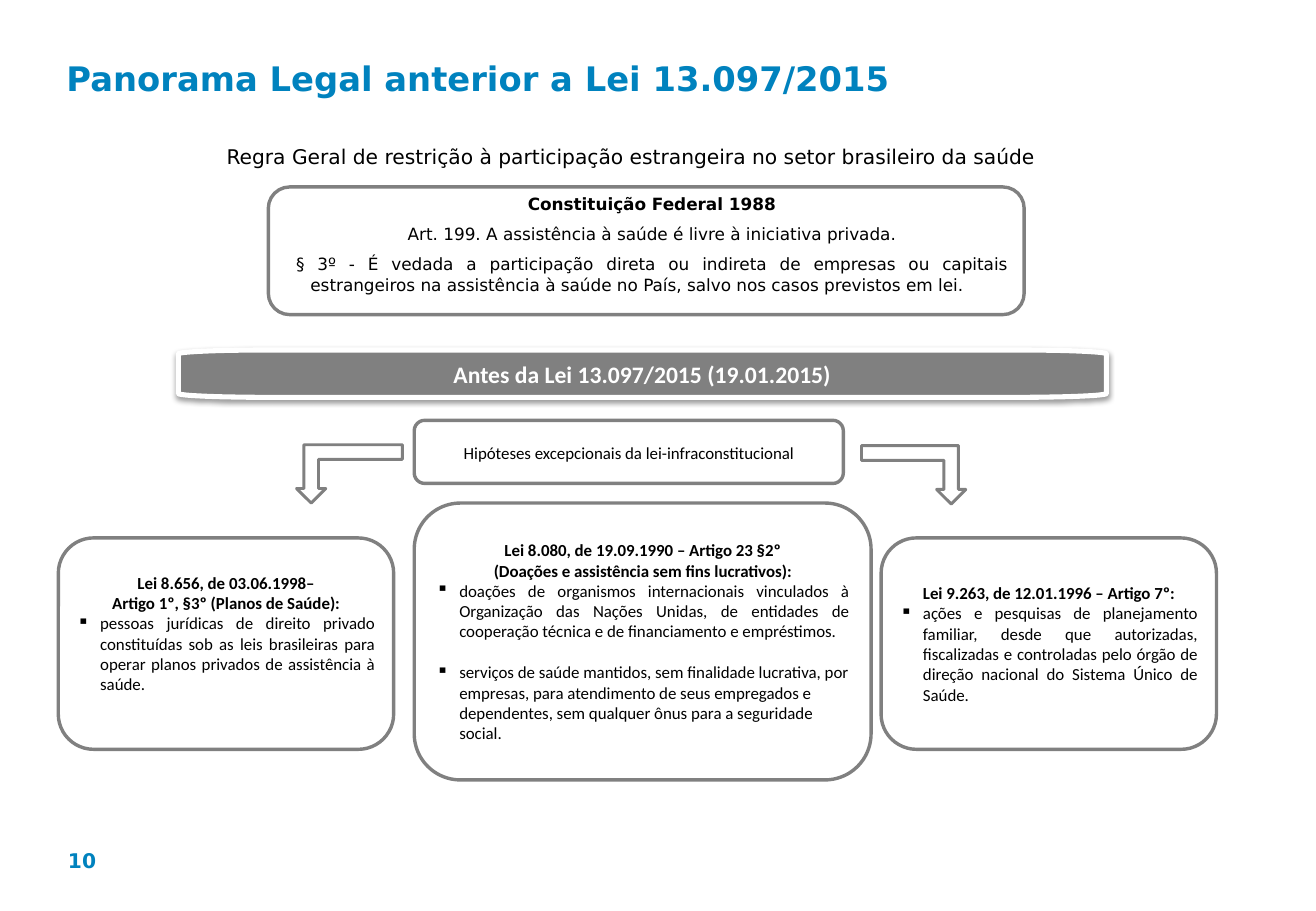
"""Build a slide on the legal framework in force before Lei 13.097/2015."""
import math

import pptx
import pptx.dml.color
import pptx.enum.shapes
import pptx.enum.text
import pptx.oxml
import pptx.oxml.ns
import pptx.util

Cm, Pt = pptx.util.Cm, pptx.util.Pt
Align = pptx.enum.text.PP_ALIGN
Anchor = pptx.enum.text.MSO_ANCHOR
Preset = pptx.enum.shapes.MSO_SHAPE

THEME = {
    "colors": {"accent": "0082BE", "text": "000000", "gray": "808080", "white": "FFFFFF"},
    "title": {"size": 20, "name": "DejaVu Sans", "bold": True, "color": "accent"},
    "number": {"size": 12, "name": "DejaVu Sans", "bold": True, "color": "accent"},
    "subtitle": {"size": 12, "name": "DejaVu Sans", "bold": False, "color": "text"},
    "law_head": {"size": 10, "name": "DejaVu Sans", "bold": True, "color": "text"},
    "law": {"size": 10, "name": "DejaVu Sans", "bold": False, "color": "text"},
    "banner": {"size": 14, "name": "Calibri", "bold": True, "color": "white"},
    "card_head": {"size": 10, "name": "Calibri", "bold": True, "color": "text"},
    "card": {"size": 10, "name": "Calibri", "bold": False, "color": "text"},
}

LOOSE = {"alignment": Align.CENTER, "line_spacing": 1.05}
CENTER = {"alignment": Align.CENTER}
JUSTIFY = {"alignment": Align.JUSTIFY}
LAW = {"line_spacing": 1.05, "space_before": Pt(5)}
LAW_INDENT, BULLET_INDENT = 0.3, 0.48

TEXT_BOXES = [
    ((0.41, 17.48, 1.85, 1.02), Anchor.MIDDLE, [("10", "number", {"alignment": Align.RIGHT}, 0, "")]),
    ((1.14, 1.09, 25.15, 1.45), Anchor.TOP,
     [("Panorama Legal anterior a Lei 13.097/2015", "title", {}, 0, "")]),
    ((1.6, 2.87, 23.19, 0.74), Anchor.TOP,
     [("Regra Geral de restrição à participação estrangeira no setor brasileiro da saúde",
       "subtitle", LOOSE, 0, "")]),
    ((5.94, 3.91, 15.37, 2.44), Anchor.TOP, [
        ("Constituição Federal 1988", "law_head", LOOSE, 0, ""),
        ("Art. 199. A assistência à saúde é livre à iniciativa privada.", "law",
         {**LAW, **CENTER}, LAW_INDENT, ""),
        ("§ 3º - É vedada a participação direta ou indireta de empresas ou capitais estrangeiros "
         "na assistência à saúde no País, salvo nos casos previstos em lei.", "law",
         {**LAW, **JUSTIFY}, LAW_INDENT, ""),
    ]),
]

INSET, LOW_INSET = 0.18, 0.61
CARD_TOP, CARD_WIDTH, CARD_HEIGHT = 11.25, 7.01, 4.42
PANELS = [
    ((5.61, 3.91, 15.8, 2.67), INSET, []),
    ((8.66, 8.79, 8.97, 1.32), INSET,
     [("Hipóteses excepcionais da lei-infraconstitucional", "card", LOOSE, 0, "")]),
    ((1.22, CARD_TOP, CARD_WIDTH, CARD_HEIGHT), LOW_INSET, [
        ("Lei 8.656, de 03.06.1998–", "card_head", CENTER, 0, ""),
        ("Artigo 1º, §3º (Planos de Saúde):", "card_head", CENTER, 0, ""),
        ("pessoas jurídicas de direito privado constituídas sob as leis brasileiras para operar "
         "planos privados de assistência à saúde.", "card", JUSTIFY, BULLET_INDENT, "▪"),
    ]),
    ((8.66, 10.52, 9.55, 5.79), INSET, [
        ("Lei 8.080, de 19.09.1990 – Artigo 23 §2º", "card_head", CENTER, 0, ""),
        ("(Doações e assistência sem fins lucrativos):", "card_head", CENTER, 0, ""),
        ("doações de organismos internacionais vinculados à Organização das Nações Unidas, de "
         "entidades de cooperação técnica e de financiamento e empréstimos.", "card",
         JUSTIFY, BULLET_INDENT, "▪"),
        ("serviços de saúde mantidos, sem finalidade lucrativa, por empresas, para atendimento "
         "de seus empregados e dependentes, sem qualquer ônus para a seguridade social.", "card",
         {"alignment": Align.LEFT, "space_before": Pt(12.2)}, BULLET_INDENT, "▪"),
    ]),
    ((18.42, CARD_TOP, CARD_WIDTH, CARD_HEIGHT), INSET, [
        ("Lei 9.263, de 12.01.1996 – Artigo 7º:", "card_head", CENTER, 0, ""),
        ("ações e pesquisas de planejamento familiar, desde que autorizadas, fiscalizadas e "
         "controladas pelo órgão de direção nacional do Sistema Único de Saúde.", "card",
         JUSTIFY, BULLET_INDENT, "▪"),
    ]),
]

ARROWS = [((6.2, 9.3, 2.21, 1.22), False), ((18.01, 9.32, 2.18, 1.22), True)]
BANNER = (3.73, 7.32, 19.4, 0.99)
BANNER_CORNER = (1.88, 0.08)
BANNER_TEXT = [("Antes da Lei 13.097/2015 (19.01.2015)", "banner", LOOSE, 0, "")]
CORNER_STEPS = 12


def color(name):
    return pptx.dml.color.RGBColor.from_string(THEME["colors"][name])


def lengths(values):
    return [Cm(value) for value in values]


def apply(target, values):
    for name, value in values.items():
        setattr(target, name, value)


def write(box, paragraphs, anchor, insets=None):
    frame = box.text_frame
    apply(frame, {"word_wrap": True, "vertical_anchor": anchor})
    if insets:
        sides = ("margin_left", "margin_top", "margin_right", "margin_bottom")
        apply(frame, dict(zip(sides, lengths(insets))))
    for index, (text, style, layout, indent, bullet) in enumerate(paragraphs):
        para = frame.add_paragraph() if index else frame.paragraphs[0]
        properties = para._p.get_or_add_pPr()
        if indent:
            properties.set("marL", str(Cm(indent)))
            properties.set("indent", str(-Cm(indent)))
        if bullet:
            mark = pptx.oxml.ns.qn("a:buChar")
            properties.append(properties.makeelement(mark, {"char": bullet}))
        apply(para, layout)
        span = para.add_run()
        span.text = text
        look = THEME[style]
        apply(span.font, {"name": look["name"], "size": Pt(look["size"]), "bold": look["bold"]})
        span.font.color.rgb = color(look["color"])


def paint(shape, fill, line, width):
    if fill:
        shape.fill.solid()
        shape.fill.fore_color.rgb = color(fill)
    else:
        shape.fill.background()
    shape.line.color.rgb = color(line)
    shape.line.width = Pt(width)
    shape.shadow.inherit = False


def add_banner(page):
    left, top, width, height = BANNER
    across, down = BANNER_CORNER
    points = []
    for quarter, (side, level) in enumerate([(1, 1), (-1, 1), (-1, -1), (1, -1)]):
        for step in range(CORNER_STEPS + 1):
            angle = (quarter + step / CORNER_STEPS) * math.pi / 2
            x = left + width / 2 + side * (width / 2 - across) + across * math.cos(angle)
            y = top + height / 2 + level * (height / 2 - down) + down * math.sin(angle)
            points.append((Cm(x), Cm(y)))
    builder = page.shapes.build_freeform(*points[0])
    builder.add_line_segments(points[1:], close=True)
    banner = builder.convert_to_shape()
    paint(banner, "gray", "white", 3)
    effects = banner._element.spPr.find(pptx.oxml.ns.qn("a:effectLst"))
    effects.append(pptx.oxml.parse_xml(
        f'<a:outerShdw {pptx.oxml.ns.nsdecls("a")} blurRad="{Pt(3.1)}" dist="{Pt(1.6)}" '
        'dir="5400000" rotWithShape="0"><a:srgbClr val="000000"><a:alpha val="38000"/>'
        '</a:srgbClr></a:outerShdw>'))
    write(banner, BANNER_TEXT, Anchor.MIDDLE, (0.28,) * 4)


def main():
    deck = pptx.Presentation()
    apply(deck, {"slide_width": Cm(27.51), "slide_height": Cm(19.05)})
    page = deck.slides.add_slide(deck.slide_layouts[6])
    for place, low_inset, paragraphs in PANELS:
        panel = page.shapes.add_shape(Preset.FLOWCHART_ALTERNATE_PROCESS, *lengths(place))
        paint(panel, "white", "gray", 2)
        if paragraphs:
            write(panel, paragraphs, Anchor.MIDDLE, (INSET, INSET, INSET, low_inset))
    for place, anchor, paragraphs in TEXT_BOXES:
        write(page.shapes.add_textbox(*lengths(place)), paragraphs, anchor)
    for place, mirrored in ARROWS:
        arrow = page.shapes.add_shape(Preset.BENT_UP_ARROW, *lengths(place))
        paint(arrow, None, "gray", 1.75)
        arrow.rotation = 180
        if mirrored:
            arrow._element.spPr.xfrm.set("flipH", "1")
    add_banner(page)
    deck.save("out.pptx")


if __name__ == "__main__":
    main()
